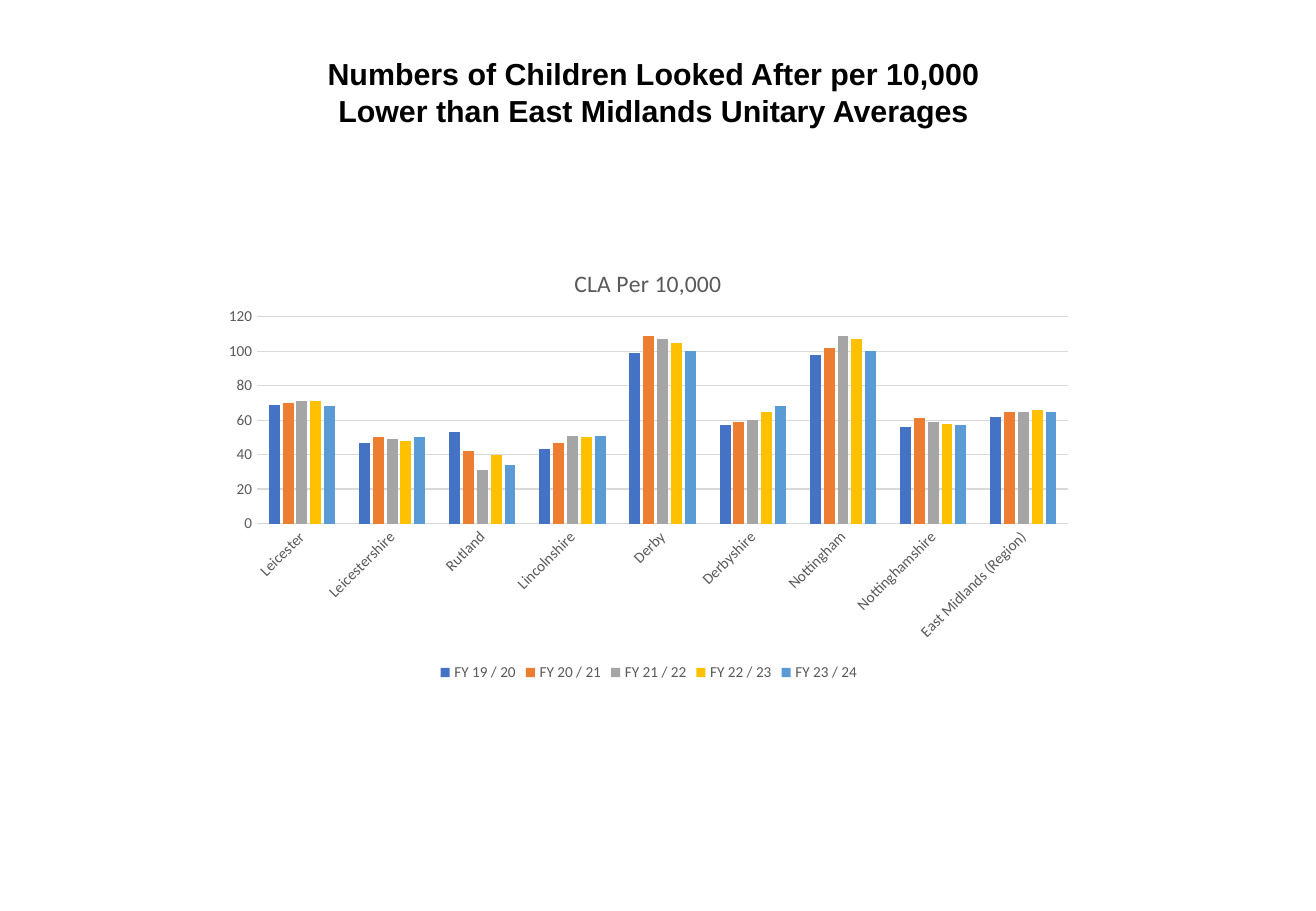
from lxml import etree
from pptx import Presentation
from pptx.chart.data import CategoryChartData as ChartData
from pptx.dml.color import RGBColor
from pptx.enum.chart import XL_CHART_TYPE as Kind
from pptx.enum.chart import XL_LEGEND_POSITION as Spot
from pptx.enum.chart import XL_TICK_MARK as Tick
from pptx.enum.text import MSO_ANCHOR as Anchor
from pptx.enum.text import MSO_AUTO_SIZE as Fit
from pptx.enum.text import PP_ALIGN as Align
from pptx.oxml.ns import qn
from pptx.util import Pt

BLACK = RGBColor(0x00, 0x00, 0x00)
GREY = RGBColor(0x59, 0x59, 0x59)
PALE = RGBColor(0xD9, 0xD9, 0xD9)
BLUE = RGBColor(0x44, 0x72, 0xC4)
ORANGE = RGBColor(0xED, 0x7D, 0x31)
SILVER = RGBColor(0xA5, 0xA5, 0xA5)
GOLD = RGBColor(0xFF, 0xC0, 0x00)
SKY = RGBColor(0x5B, 0x9B, 0xD5)

AREAS = ["Leicester", "Leicestershire", "Rutland", "Lincolnshire", "Derby",
         "Derbyshire", "Nottingham", "Nottinghamshire",
         "East Midlands (Region)"]
YEARS = [
    ("FY 19 / 20", BLUE, [69, 47, 53, 43, 99, 57, 98, 56, 62]),
    ("FY 20 / 21", ORANGE, [70, 50, 42, 47, 109, 59, 102, 61, 65]),
    ("FY 21 / 22", SILVER, [71, 49, 31, 51, 107, 60, 109, 59, 65]),
    ("FY 22 / 23", GOLD, [71, 48, 40, 50, 105, 65, 107, 58, 66]),
    ("FY 23 / 24", SKY, [68, 50, 34, 51, 100, 68, 100, 57, 65]),
]


def apply(item, form):
    for key, value in form.items():
        setattr(item, key, value)


def place(parent, index, **spots):
    """Give a chart part a fixed place, as shares of the chart."""
    for old in parent.findall(qn("c:layout")):
        parent.remove(old)
    layout = etree.Element(qn("c:layout"))
    parent.insert(index, layout)
    manual = etree.SubElement(layout, qn("c:manualLayout"))
    for tag, value in spots.items():
        etree.SubElement(manual, qn("c:" + tag)).set("val", str(value))


class Deck:
    head = {"name": "Arial", "size": Pt(18), "bold": True}
    label = {"name": "Calibri", "size": Pt(9), "bold": False}
    banner = {"name": "Calibri", "size": Pt(14), "bold": False}

    def __init__(self, width, height):
        self.prs = Presentation()
        apply(self.prs, {"slide_width": Pt(width), "slide_height": Pt(height)})
        self.slide = self.prs.slides.add_slide(self.prs.slide_layouts[5])

    def style(self, font, form, color):
        apply(font, form)
        font.color.rgb = color

    def line(self, form):
        form.line.color.rgb = PALE
        form.line.width = Pt(0.75)

    def title(self, text, box):
        shape = self.slide.shapes.title
        apply(shape, dict(zip(("left", "top", "width", "height"),
                              map(Pt, box))))
        frame = shape.text_frame
        apply(frame, {"word_wrap": True, "auto_size": Fit.NONE,
                      "vertical_anchor": Anchor.MIDDLE,
                      "margin_left": Pt(110), "margin_right": Pt(7)})
        frame.text = text
        par = frame.paragraphs[0]
        par.alignment = Align.CENTER
        for run in par.runs:
            self.style(run.font, self.head, BLACK)

    def columns(self, title, areas, years, box):
        data = ChartData(number_format="0")
        data.categories = areas
        for name, _, values in years:
            data.add_series(name, values)
        chart = self.slide.shapes.add_chart(
            Kind.COLUMN_CLUSTERED, *map(Pt, box), data).chart
        self.style(chart.font, {**self.label, "size": Pt(10)}, BLACK)

        # Bars
        plot = chart.plots[0]
        apply(plot, {"gap_width": 219, "overlap": -27,
                     "vary_by_categories": False})
        for series, (_, color, _) in zip(plot.series, years):
            series.format.fill.solid()
            series.format.fill.fore_color.rgb = color

        # Axes
        cat, val = chart.category_axis, chart.value_axis
        for axis in (cat, val):
            apply(axis, {"major_tick_mark": Tick.NONE,
                         "minor_tick_mark": Tick.NONE})
            self.style(axis.tick_labels.font, self.label, GREY)
        self.line(cat.format)
        body = cat._element.find(qn("c:txPr")).find(qn("a:bodyPr"))
        body.set("rot", "-2700000")
        apply(val, {"minimum_scale": 0, "maximum_scale": 120,
                    "major_unit": 20, "has_major_gridlines": True})
        val.format.line.fill.background()
        self.line(val.major_gridlines.format)

        # Heading and legend
        frame = chart.chart_title.text_frame
        frame.text = title
        self.style(frame.paragraphs[0].runs[0].font, self.banner, GREY)
        chart.has_legend = True
        apply(chart.legend, {"position": Spot.BOTTOM,
                             "include_in_layout": False})
        self.style(chart.legend.font, self.label, GREY)

        # Places inside the chart
        place(chart.chart_title._element, 1,
              xMode="edge", yMode="edge", x=0.41, y=0.05)
        area = chart._chartSpace.chart.plotArea
        place(area, 0, layoutTarget="inner", xMode="edge", yMode="edge",
              x=0.052, y=0.171, w=0.928, h=0.464)

    def save(self):
        self.prs.save("out.pptx")


def main():
    deck = Deck(780, 540)
    deck.title("Numbers of Children Looked After per 10,000\v"
               "Lower than East Midlands Unitary Averages",
               (13.7, 28.8, 644.4, 51.1))
    deck.columns("CLA Per 10,000", AREAS, YEARS,
                 (125.3, 142.6, 518.4, 264.2))
    deck.save()


if __name__ == "__main__":
    main()
